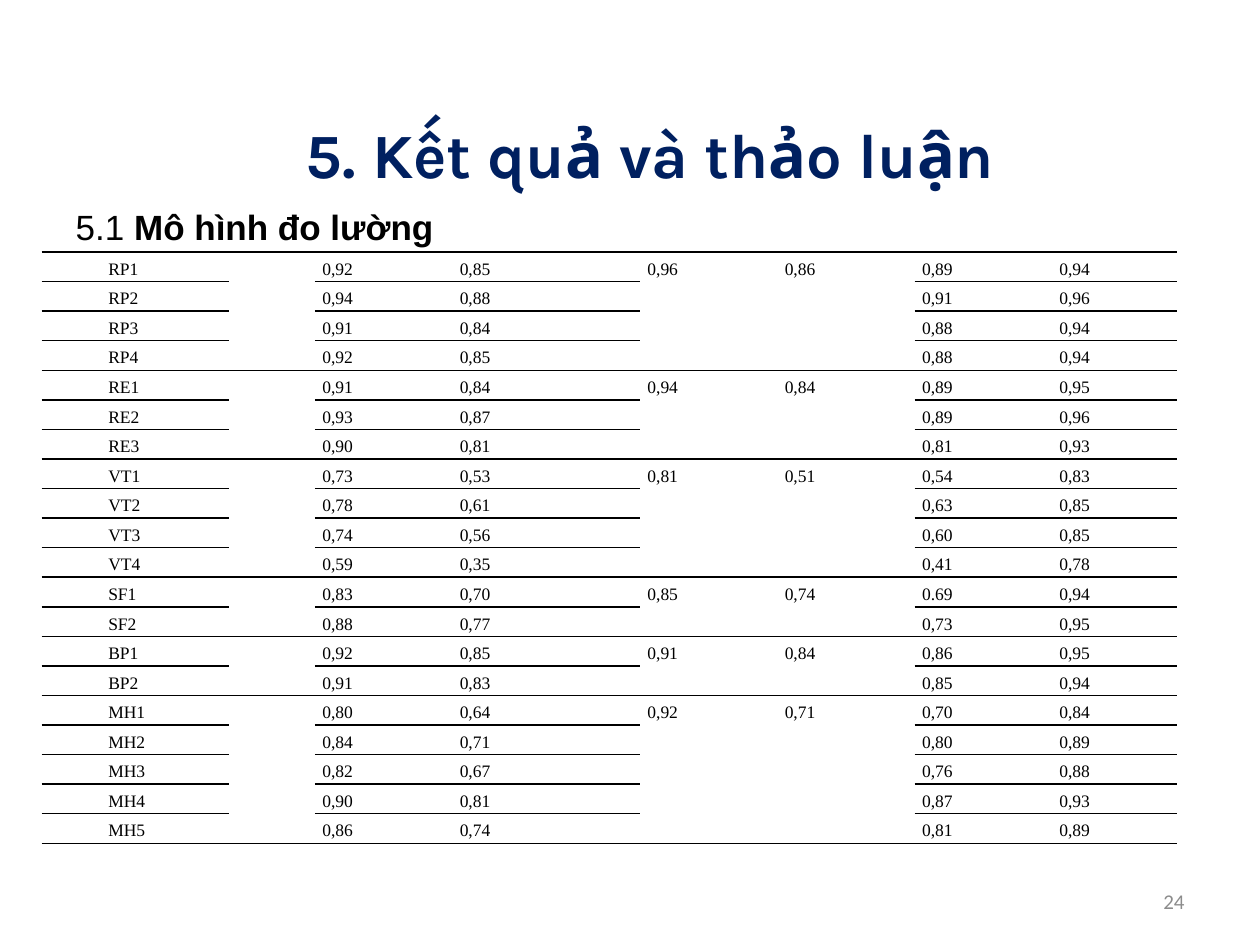
from dataclasses import dataclass

from lxml.etree import SubElement
from pptx import Presentation
from pptx.dml.color import RGBColor
from pptx.enum.text import MSO_ANCHOR as Anchor, PP_ALIGN as Align
from pptx.oxml.ns import qn
from pptx.util import Inches, Pt


@dataclass(frozen=True)
class Theme:
    navy: str = "002060"
    black: str = "000000"
    grey: str = "8C8C8C"
    white: str = "FFFFFF"
    title_font: str = "Karla"
    body_font: str = "Arial"
    table_font: str = "Times New Roman"
    number_font: str = "Calibri"
    title_size: int = 36
    body_size: int = 20
    table_size: int = 10
    number_size: int = 12
    rule_width: float = 1
    table_spacing: float = 1.4


COLUMN_WIDTHS = [0.47, 1.02, 0.68, 1.09, 1.49, 1.09, 1.09, 1.09, 0.99]
TABLE_HEIGHT = 4.7
MERGED_COLUMNS = (2, 5, 6)

# Each group: its two shared values, then one line per indicator
GROUPS = [
    ("0,96", "0,86", ["RP1 0,92 0,85 0,89 0,94", "RP2 0,94 0,88 0,91 0,96",
                      "RP3 0,91 0,84 0,88 0,94", "RP4 0,92 0,85 0,88 0,94"]),
    ("0,94", "0,84", ["RE1 0,91 0,84 0,89 0,95", "RE2 0,93 0,87 0,89 0,96",
                      "RE3 0,90 0,81 0,81 0,93"]),
    ("0,81", "0,51", ["VT1 0,73 0,53 0,54 0,83", "VT2 0,78 0,61 0,63 0,85",
                      "VT3 0,74 0,56 0,60 0,85", "VT4 0,59 0,35 0,41 0,78"]),
    ("0,85", "0,74", ["SF1 0,83 0,70 0.69 0,94", "SF2 0,88 0,77 0,73 0,95"]),
    ("0,91", "0,84", ["BP1 0,92 0,85 0,86 0,95", "BP2 0,91 0,83 0,85 0,94"]),
    ("0,92", "0,71", ["MH1 0,80 0,64 0,70 0,84", "MH2 0,84 0,71 0,80 0,89",
                      "MH3 0,82 0,67 0,76 0,88", "MH4 0,90 0,81 0,87 0,93",
                      "MH5 0,86 0,74 0,81 0,89"]),
]


class SlideBuilder:
    def __init__(self, slide, theme):
        self.slide = slide
        self.theme = theme

    def style(self, span, font, size, color, bold=False):
        span.font.name = font
        span.font.size = Pt(size)
        span.font.bold = bold
        span.font.color.rgb = RGBColor.from_string(color)

    def place(self, box, left, top, width, height):
        box.left, box.top = Inches(left), Inches(top)
        box.width, box.height = Inches(width), Inches(height)

    def title(self, text, *position):
        box = self.slide.shapes.title
        self.place(box, *position)
        box.text_frame.text = text
        box.text_frame.vertical_anchor = Anchor.MIDDLE
        para = box.text_frame.paragraphs[0]
        para.alignment = Align.CENTER
        theme = self.theme
        self.style(para.runs[0], theme.title_font, theme.title_size, theme.navy, True)

    def heading(self, number, text, *position):
        box = self.slide.placeholders[1]
        self.place(box, *position)
        para = box.text_frame.paragraphs[0]
        properties = para._p.get_or_add_pPr()
        SubElement(properties, qn("a:buNone"))
        para.space_before = Pt(0)
        theme = self.theme
        for words, bold in ((number, False), (text, True)):
            span = para.add_run()
            span.text = words
            self.style(span, theme.body_font, theme.body_size, theme.black, bold)

    def page_number(self, text, *position):
        box = self.slide.shapes.add_textbox(*map(Inches, position))
        frame = box.text_frame
        frame.word_wrap = True
        frame.vertical_anchor = Anchor.MIDDLE
        frame.text = text
        para = frame.paragraphs[0]
        para.alignment = Align.RIGHT
        theme = self.theme
        self.style(para.runs[0], theme.number_font, theme.number_size, theme.grey)

    def cell(self, cell, text, top, bottom):
        theme = self.theme
        cell.margin_left = cell.margin_right = Inches(0.06)
        cell.margin_top = cell.margin_bottom = 0
        # Borders come before the fill in the cell properties
        properties = cell._tc.get_or_add_tcPr()
        sides = {"lnL": False, "lnR": False, "lnT": top, "lnB": bottom}
        for side, drawn in sides.items():
            line = SubElement(properties, qn(f"a:{side}"), w=str(Pt(theme.rule_width)))
            if drawn:
                fill = SubElement(line, qn("a:solidFill"))
                SubElement(fill, qn("a:srgbClr"), val=theme.black)
            else:
                SubElement(line, qn("a:noFill"))
        cell.fill.solid()
        cell.fill.fore_color.rgb = RGBColor.from_string(theme.white)
        para = cell.text_frame.paragraphs[0]
        if text:
            para.text = text
            para.alignment = Align.JUSTIFY
            para.line_spacing = theme.table_spacing
            self.style(para.runs[0], theme.table_font, theme.table_size, theme.black)
        # The paragraph end takes the table type, so it cannot stretch the row
        end = SubElement(para._p, qn("a:endParaRPr"), sz=str(theme.table_size * 100))
        SubElement(end, qn("a:latin"), typeface=theme.table_font)

    def table(self, groups, left, top):
        row_count = sum(len(items) for _, _, items in groups)
        frame = self.slide.shapes.add_table(
            row_count, len(COLUMN_WIDTHS), Inches(left), Inches(top),
            Inches(sum(COLUMN_WIDTHS)), Inches(TABLE_HEIGHT))
        table = frame.table
        table.first_row = table.horz_banding = False
        for column, width in zip(table.columns, COLUMN_WIDTHS):
            column.width = Inches(width)
        for row in table.rows:
            row.height = Inches(TABLE_HEIGHT / row_count)

        start = 0
        for reliability, variance, items in groups:
            last = len(items) - 1
            for offset, item in enumerate(items):
                name, *values = item.split()
                shared = ["", ""] if offset else [reliability, variance]
                texts = ["", name, "", *values[:2], *shared, *values[2:]]
                for index, text in enumerate(texts):
                    merged = index in MERGED_COLUMNS
                    self.cell(table.cell(start + offset, index), text,
                              top=not merged or offset == 0,
                              bottom=not merged or offset in (0, last))
            for index in MERGED_COLUMNS:
                table.cell(start, index).merge(table.cell(start + last, index))
            start += len(items)


def main():
    deck = Presentation()
    deck.slide_width, deck.slide_height = Inches(10), Inches(7.5)
    page = SlideBuilder(deck.slides.add_slide(deck.slide_layouts[1]), Theme())

    # Title and section heading
    page.title("5. Kết quả và thảo luận", 0.66, 0.84, 9, 0.75)
    page.heading("5.1 ", "Mô hình đo lường", 0.5, 1.58, 9, 4.95)

    # Page number and measurement table
    page.page_number("24", 7.17, 6.95, 2.33, 0.4)
    page.table(GROUPS, 0.33, 2)

    deck.save("out.pptx")


if __name__ == "__main__":
    main()
